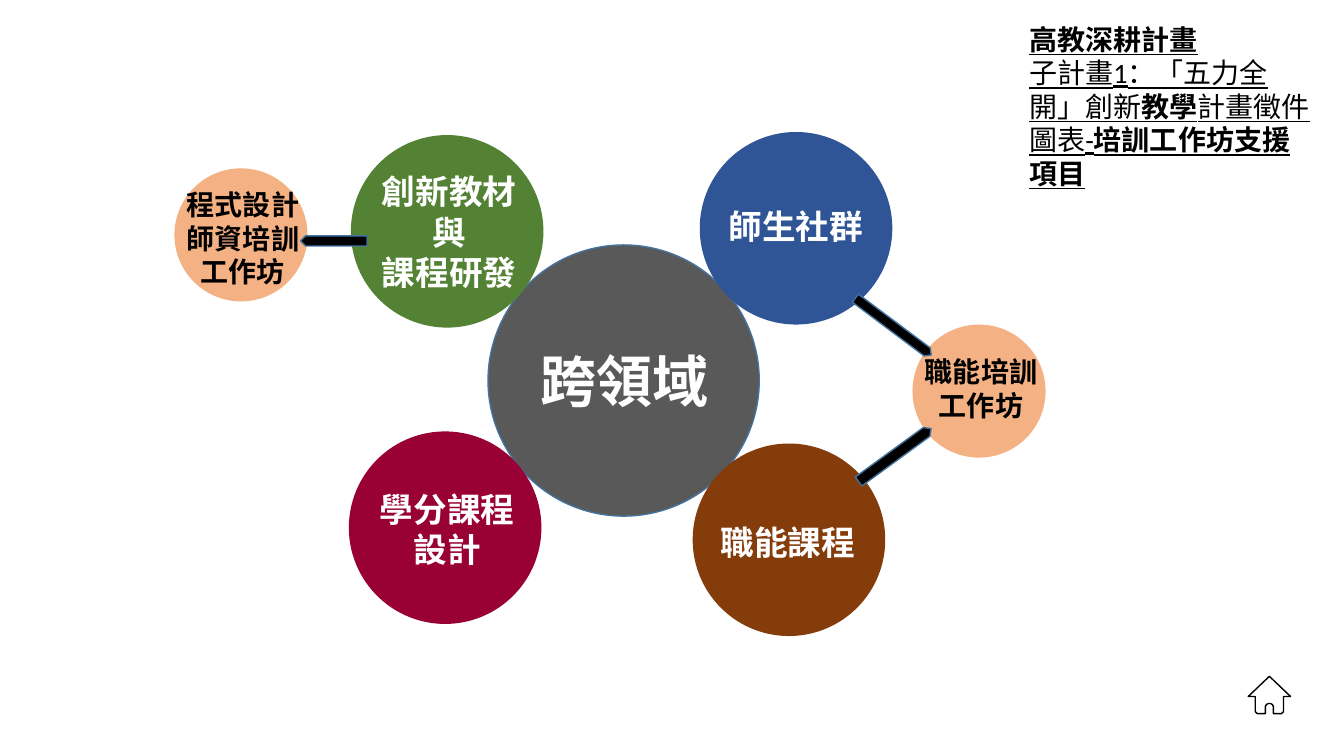
from dataclasses import dataclass

from pptx import Presentation
from pptx.dml.color import RGBColor
from pptx.enum.shapes import MSO_SHAPE
from pptx.enum.text import MSO_ANCHOR, PP_ALIGN
from pptx.shapes.autoshape import Shape
from pptx.slide import Slide
from pptx.text.text import Font
from pptx.util import Inches, Pt

BLACK, WHITE, OUTLINE, PEACH = "000000", "FFFFFF", "43739E", "F4B183"


@dataclass
class Style:
    diameter: float
    font_name: str
    size: int
    text_color: str
    alignment: PP_ALIGN = PP_ALIGN.CENTER
    outline: str | None = None


@dataclass
class Bubble:
    left: float
    top: float
    fill: str
    text: str
    label: tuple[float, float, float, float]
    style: Style


@dataclass
class Bar:
    left: float
    top: float
    width: float
    height: float
    rotation: float


HUB = Style(2.69, "Manrope", 40, WHITE, PP_ALIGN.LEFT, OUTLINE)
TOPIC = Style(1.91, "Manrope", 24, WHITE)
WORKSHOP = Style(1.32, "Calibri", 20, BLACK)

BUBBLES = [
    Bubble(4.84, 2.43, "595959", "跨領域", (5.26, 3.39, 1.97, 0.77), HUB),
    Bubble(3.48, 1.34, "548235", "創新教材\v與\v課程研發", (3.62, 1.65, 1.67, 1.31), TOPIC),
    Bubble(3.46, 4.28, "990033", "學分課程設計", (3.6, 4.8, 1.67, 0.91), TOPIC),
    Bubble(6.94, 1.31, "2F5597", "師生社群", (7.06, 1.99, 1.67, 0.5), TOPIC),
    Bubble(6.87, 4.4, "843C0B", "職能課程", (6.98, 5.13, 1.67, 0.5), TOPIC),
    Bubble(9.05, 3.22, PEACH, "職能培訓工作坊", (9.07, 3.47, 1.32, 0.77), WORKSHOP),
    Bubble(1.73, 1.67, PEACH, "程式設計師資培訓工作坊", (1.75, 1.81, 1.32, 1.11), WORKSHOP),
]
BARS = [
    Bar(8.39, 3.19, 0.94, 0.1, 36.8),
    Bar(2.98, 2.34, 0.66, 0.1, 180),
    Bar(8.43, 4.46, 0.89, 0.11, 323.9),
]
# Each title paragraph is a list of (text, bold) pieces.
TITLE = [
    [("高教深耕計畫", True)],
    [
        ("子計畫1：「五力全開」創新", False),
        ("教學", True),
        ("計畫徵件圖表-", False),
        ("培訓工作坊支援項目", True),
    ],
]
# Left half of the house outline: offset from the centre line, then height on the slide.
HOUSE_CENTER = 12.59
HOUSE_HALF = [
    (0, 6.71), (-0.21, 6.91), (-0.14, 6.91), (-0.14, 7.06), (-0.13, 7.07),
    (-0.12, 7.08), (-0.04, 7.08), (-0.04, 7.01), (-0.03, 6.99), (-0.01, 6.98),
]


def rgb(color: str) -> RGBColor:
    return RGBColor.from_string(color)


def paint(shape: Shape, fill: str | None, outline: str | None) -> None:
    shape.shadow.inherit = False
    if fill:
        shape.fill.solid()
        shape.fill.fore_color.rgb = rgb(fill)
    else:
        shape.fill.background()
    if outline:
        shape.line.color.rgb = rgb(outline)
        shape.line.width = Pt(1)
    else:
        shape.line.fill.background()


def set_font(font: Font, name: str, size: int, color: str) -> None:
    font.name = name
    font.size = Pt(size)
    font.color.rgb = rgb(color)


def draw_bubble(slide: Slide, bubble: Bubble) -> None:
    style = bubble.style
    group = slide.shapes.add_group_shape()
    circle = group.shapes.add_shape(
        MSO_SHAPE.OVAL, Inches(bubble.left), Inches(bubble.top),
        Inches(style.diameter), Inches(style.diameter),
    )
    paint(circle, bubble.fill, style.outline)

    label = group.shapes.add_textbox(*(Inches(length) for length in bubble.label))
    frame = label.text_frame
    frame.word_wrap = True
    frame.vertical_anchor = MSO_ANCHOR.TOP
    paragraph = frame.paragraphs[0]
    paragraph.text = bubble.text
    paragraph.alignment = style.alignment
    set_font(paragraph.font, style.font_name, style.size, style.text_color)
    paragraph.font.bold = True


def draw_bar(slide: Slide, bar: Bar) -> None:
    shape = slide.shapes.add_shape(
        MSO_SHAPE.PENTAGON, Inches(bar.left), Inches(bar.top),
        Inches(bar.width), Inches(bar.height),
    )
    shape.rotation = bar.rotation
    paint(shape, BLACK, OUTLINE)


def draw_title(slide: Slide) -> None:
    box = slide.shapes.add_textbox(Inches(10.11), Inches(0.17), Inches(3.06), Inches(1.45))
    frame = box.text_frame
    frame.word_wrap = True
    for index, pieces in enumerate(TITLE):
        paragraph = frame.add_paragraph() if index else frame.paragraphs[0]
        set_font(paragraph.font, "Calibri", 20, BLACK)
        paragraph.font.underline = True
        for text, bold in pieces:
            run = paragraph.add_run()
            run.text = text
            run.font.bold = bold


def draw_house(slide: Slide) -> None:
    mirrored = [(-offset, y) for offset, y in reversed(HOUSE_HALF[1:])]
    points = [
        (Inches(HOUSE_CENTER + offset), Inches(y)) for offset, y in HOUSE_HALF + mirrored
    ]
    builder = slide.shapes.build_freeform(*points[0])
    builder.add_line_segments(points[1:], close=True)
    paint(builder.convert_to_shape(), None, BLACK)


def main() -> None:
    presentation = Presentation()
    presentation.slide_width = Inches(13.33)
    presentation.slide_height = Inches(7.5)
    slide = presentation.slides.add_slide(presentation.slide_layouts[6])
    for bubble in BUBBLES:
        draw_bubble(slide, bubble)
    for bar in BARS:
        draw_bar(slide, bar)
    draw_title(slide)
    draw_house(slide)
    presentation.save("out.pptx")


if __name__ == "__main__":
    main()
